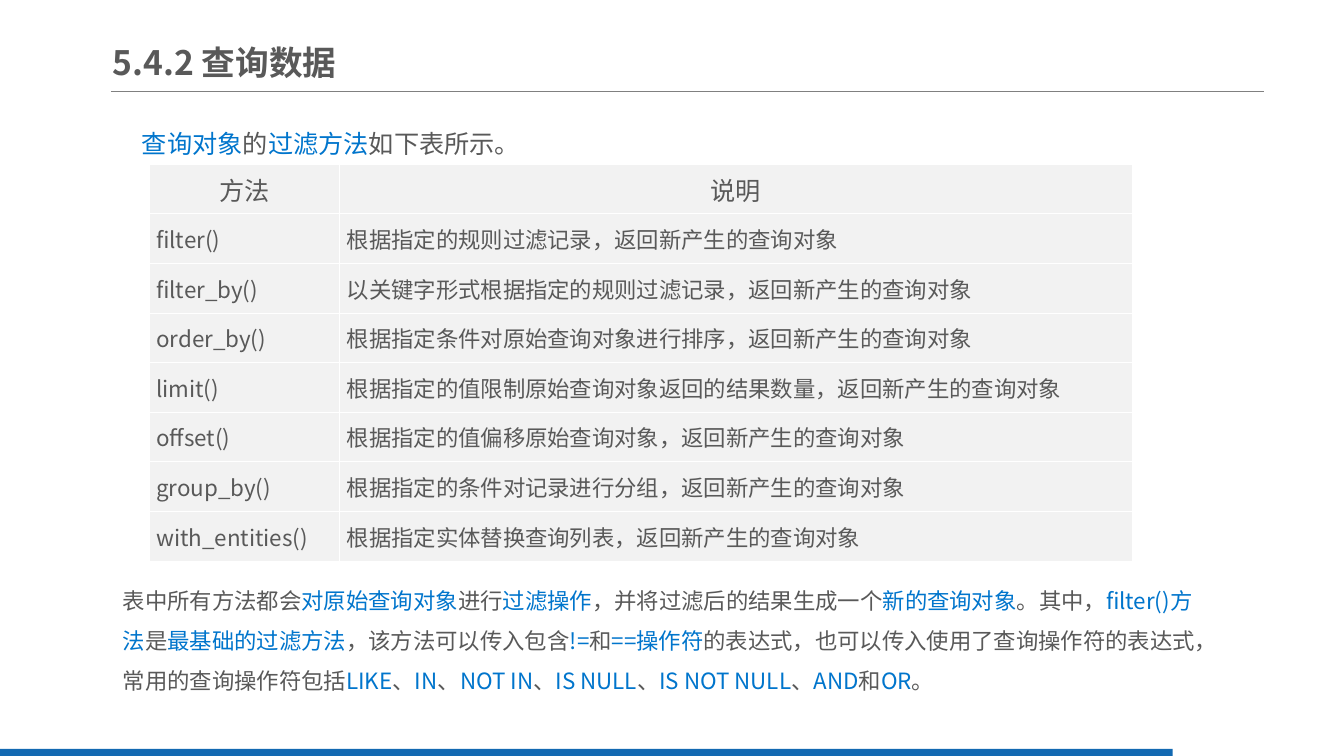
import pptx
import pptx.util
import pptx.dml.color
import pptx.enum.shapes
import pptx.enum.text
from pptx.oxml.ns import qn
from lxml import etree

Inches = pptx.util.Inches
Anchor = pptx.enum.text.MSO_ANCHOR
Align = pptx.enum.text.PP_ALIGN

FONT = "Noto Sans CJK SC"
GREY, BLUE, PALE, WHITE = "595959", "0075CC", "F2F2F2", "FFFFFF"
RULE, FOOTER = "808080", "1369B2"

TITLE = "5.4.2 查询数据"
INTRO = ["查询对象", "的", "过滤方法", "如下表所示。"]
METHODS = [
    ("方法", "说明"),
    ("filter()", "根据指定的规则过滤记录，返回新产生的查询对象"),
    ("filter_by()", "以关键字形式根据指定的规则过滤记录，返回新产生的查询对象"),
    ("order_by()", "根据指定条件对原始查询对象进行排序，返回新产生的查询对象"),
    ("limit()", "根据指定的值限制原始查询对象返回的结果数量，返回新产生的查询对象"),
    ("offset()", "根据指定的值偏移原始查询对象，返回新产生的查询对象"),
    ("group_by()", "根据指定的条件对记录进行分组，返回新产生的查询对象"),
    ("with_entities()", "根据指定实体替换查询列表，返回新产生的查询对象"),
]
SUMMARY = [
    "表中所有方法都会", "对原始查询对象", "进行", "过滤操作",
    "，并将过滤后的结果生成一个", "新的查询对象", "。其中，", "filter()方法",
    "是", "最基础的过滤方法", "，该方法可以传入包含", "!=", "和", "==操作符",
    "的表达式，也可以传入使用了查询操作符的表达式，常用的查询操作符包括",
    "LIKE", "、", "IN", "、", "NOT IN", "、", "IS NULL", "、",
    "IS NOT NULL", "、", "AND", "和", "OR", "。",
]
COLUMN_WIDTHS = [1.89, 7.86]
TABLE_HEIGHT = 3.94


def colour(value):
    return pptx.dml.color.RGBColor.from_string(value)


def add_span(para, text, size, ink=GREY, bold=False):
    span = para.add_run()
    span.text = text
    span.font.size = pptx.util.Pt(size)
    span.font.bold = bold
    span.font.color.rgb = colour(ink)
    span.font.name = FONT
    etree.SubElement(span.font._element, qn("a:ea"), typeface=FONT)


def add_mixed_text(page, place, spans, size, inks):
    box = page.shapes.add_textbox(*map(Inches, place))
    box.text_frame.word_wrap = True
    box.text_frame.auto_size = pptx.enum.text.MSO_AUTO_SIZE.SHAPE_TO_FIT_TEXT
    para = box.text_frame.paragraphs[0]
    para.line_spacing = 1.5
    for number, text in enumerate(spans):
        add_span(para, text, size, inks[number % 2])


def add_title(page):
    title = page.shapes.title
    title.left, title.top, title.width, title.height = map(Inches, (1.12, 0.34, 4.89, 0.55))
    frame = title.text_frame
    frame.auto_size = pptx.enum.text.MSO_AUTO_SIZE.NONE
    frame.vertical_anchor = Anchor.MIDDLE
    frame.margin_left = frame.margin_right = 0
    frame.margin_top = frame.margin_bottom = Inches(0.07)
    para = frame.paragraphs[0]
    para.alignment = Align.LEFT
    add_span(para, TITLE, 24, bold=True)


def add_frame_marks(page):
    rule = page.shapes.add_connector(
        pptx.enum.shapes.MSO_CONNECTOR.STRAIGHT, *map(Inches, (1.1, 0.91, 12.54, 0.91)))
    rule.line.color.rgb = colour(RULE)
    rule.line.width = pptx.util.Pt(0.75)
    etree.SubElement(rule._element.spPr, qn("a:effectLst"))
    footer = page.shapes.add_shape(
        pptx.enum.shapes.MSO_SHAPE.RECTANGLE, *map(Inches, (0, 7.43, 11.63, 0.09)))
    footer.shadow.inherit = False
    footer.fill.solid()
    footer.fill.fore_color.rgb = colour(FOOTER)
    footer.line.fill.background()


def style_cell(cell):
    cell.vertical_anchor = Anchor.MIDDLE
    cell.margin_left = cell.margin_right = Inches(0.07)
    cell.margin_top = cell.margin_bottom = 0
    properties = cell._tc.get_or_add_tcPr()
    for side in ("lnL", "lnR", "lnT", "lnB"):
        border = etree.SubElement(properties, qn("a:" + side), w=str(pptx.util.Pt(0.75)))
        fill = etree.SubElement(border, qn("a:solidFill"))
        etree.SubElement(fill, qn("a:srgbClr"), val=WHITE)
    cell.fill.solid()
    cell.fill.fore_color.rgb = colour(PALE)


def add_methods(page):
    table = page.shapes.add_table(
        len(METHODS), len(COLUMN_WIDTHS), Inches(1.48), Inches(1.63),
        Inches(sum(COLUMN_WIDTHS)), Inches(TABLE_HEIGHT)).table
    table.horz_banding = False
    for column, width in zip(table.columns, COLUMN_WIDTHS):
        column.width = Inches(width)
    for row, texts in enumerate(METHODS):
        for column, text in enumerate(texts):
            cell = table.cell(row, column)
            style_cell(cell)
            para = cell.text_frame.paragraphs[0]
            para.alignment = Align.LEFT if row else Align.CENTER
            add_span(para, text, 16 if row else 18)


def main():
    deck = pptx.Presentation()
    deck.slide_width, deck.slide_height = Inches(13.33), Inches(7.5)
    page = deck.slides.add_slide(deck.slide_layouts[5])
    add_frame_marks(page)
    add_mixed_text(page, (1.31, 1.07, 3.78, 0.56), INTRO, 18, (BLUE, GREY))
    add_mixed_text(page, (1.12, 5.64, 10.98, 1.31), SUMMARY, 16, (GREY, BLUE))
    add_title(page)
    add_methods(page)
    deck.save("out.pptx")


if __name__ == "__main__":
    main()
